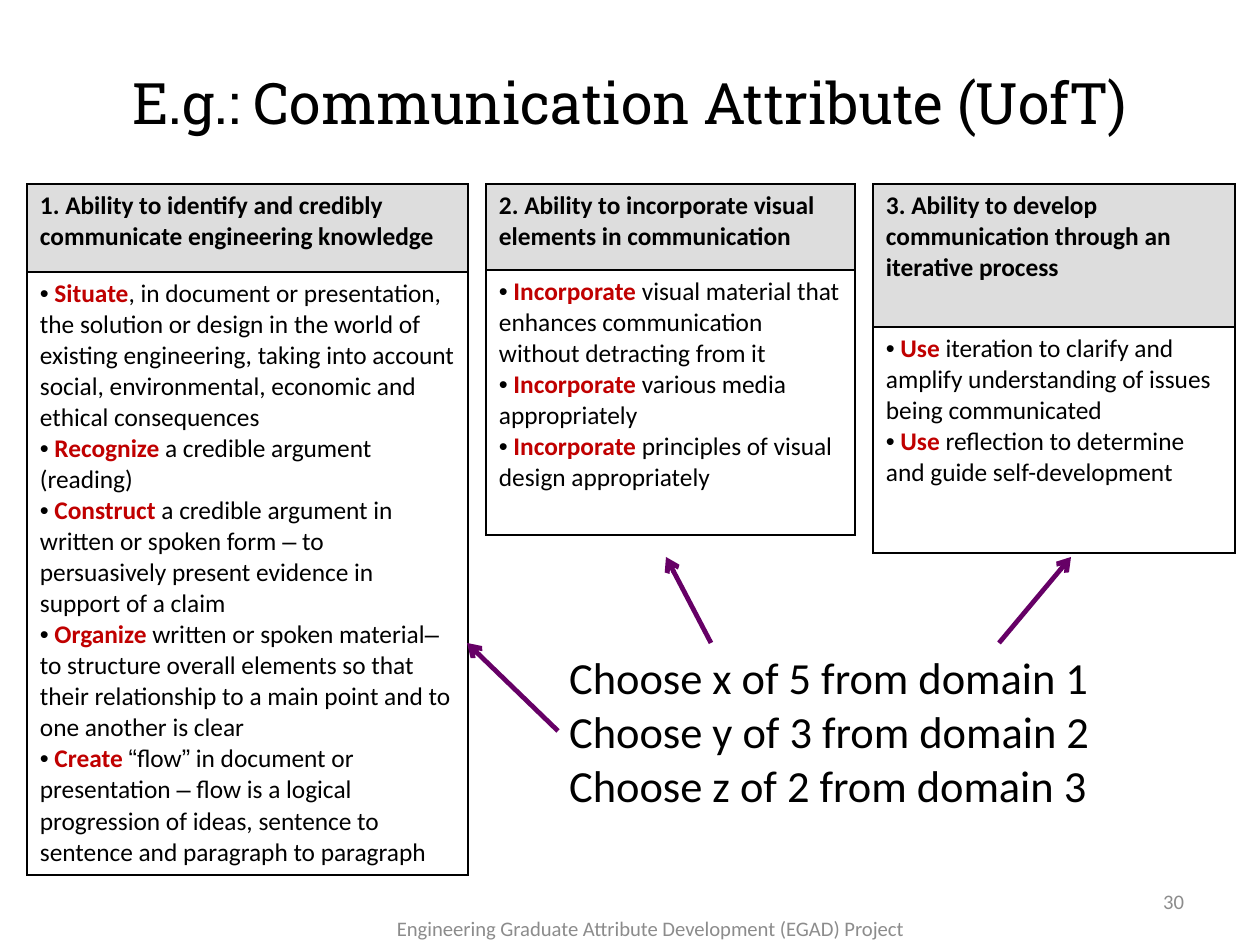
from itertools import groupby

from lxml.etree import SubElement
from pptx import Presentation
from pptx.dml.color import RGBColor
from pptx.enum.shapes import MSO_CONNECTOR
from pptx.enum.text import MSO_ANCHOR, PP_ALIGN
from pptx.oxml import parse_xml
from pptx.oxml.ns import nsdecls, qn
from pptx.util import Emu, Pt

PX = 8000  # EMU; the 28 by 21 cm slide is 1260 by 945 px

BLACK = RGBColor(0x00, 0x00, 0x00)
WHITE = RGBColor(0xFF, 0xFF, 0xFF)
HEADER_GRAY = RGBColor(0xDD, 0xDD, 0xDD)
FOOTER_GRAY = RGBColor(0x8C, 0x8C, 0x8C)
VERB_RED = RGBColor(0xC0, 0x00, 0x00)
ARROW_PURPLE = RGBColor(0x66, 0x00, 0x66)

INSETS = {"margin_left": 13, "margin_top": 6, "margin_right": 13, "margin_bottom": 6}
ARIAL_MARKS = "–“”"

# box of the table, header height, header, (verb, rest) of each indicator
DOMAINS = [
    ((27, 184, 441, 691), 88,
     "1. Ability to identify and credibly communicate engineering knowledge",
     [("Situate", ", in document or presentation, the solution or design in the world of "
       "existing engineering, taking into account social, environmental, economic and "
       "ethical consequences"),
      ("Recognize ", "a credible argument (reading)"),
      ("Construct ", "a credible argument in written or spoken form – to persuasively "
       "present evidence in support of a claim"),
      ("Organize ", "written or spoken material– to structure overall elements so that "
       "their relationship to a main point and to one another is clear"),
      ("Create ", "“flow” in document or presentation – flow is a logical progression "
       "of ideas, sentence to sentence and paragraph to paragraph")]),
    ((486, 184, 369, 351), 86,
     "2. Ability to incorporate visual elements in communication",
     [("Incorporate ", "visual material that enhances communication without detracting from it"),
      ("Incorporate ", "various media appropriately"),
      ("Incorporate ", "principles of visual design appropriately")]),
    ((873, 184, 362, 369), 143,
     "3. Ability to develop communication through an iterative process",
     [("Use ", "iteration to clarify and amplify understanding of issues being communicated"),
      ("Use ", "reflection to determine and guide self-development")]),
]
CHOICES = ["Choose x of 5 from domain 1", "Choose y of 3 from domain 2",
           "Choose z of 2 from domain 3"]


def px(*lengths):
    return [Emu(n * PX) for n in lengths]


def set_insets(target):
    for name, n in INSETS.items():
        setattr(target, name, Emu(n * PX))


def add_run(p, text, size, color=BLACK, bold=False, name="Calibri"):
    r = p.add_run()
    r.text = text
    for key, value in {"size": Pt(size), "bold": bold, "name": name}.items():
        setattr(r.font, key, value)
    r.font.color.rgb = color


def add_bullet(p):
    """Give a bullet whose wrapped lines return to the left edge."""
    pPr = p._p.get_or_add_pPr()
    pPr.set("marL", "0")
    pPr.set("indent", "0")
    SubElement(pPr, qn("a:buFont"), typeface="Arial")
    SubElement(pPr, qn("a:buChar"), char="•")


def format_cell(cell, color):
    set_insets(cell)
    cell.fill.solid()
    cell.fill.fore_color.rgb = color
    tcPr = cell._tc.get_or_add_tcPr()
    for i, side in enumerate("LRTB"):
        tcPr.insert(i, parse_xml(
            f'<a:ln{side} {nsdecls("a")} w="12700"><a:solidFill>'
            f'<a:srgbClr val="{BLACK}"/></a:solidFill></a:ln{side}>'))


def add_domain(slide, box, header_height, header, indicators):
    table = slide.shapes.add_table(2, 1, *px(*box)).table
    for flag in ("first_row", "horz_banding"):
        setattr(table, flag, False)
    heights = px(header_height, box[3] - header_height)
    for row, height, color in zip(table.rows, heights, (HEADER_GRAY, WHITE)):
        row.height = height
        format_cell(row.cells[0], color)
    add_run(table.cell(0, 0).text_frame.paragraphs[0], header, 16, bold=True)
    tf = table.cell(1, 0).text_frame
    for i, (verb, rest) in enumerate(indicators):
        p = tf.add_paragraph() if i else tf.paragraphs[0]
        add_bullet(p)
        add_run(p, " ", 16, bold=True)
        add_run(p, verb, 16, VERB_RED, bold=True)
        for is_mark, chars in groupby(rest, lambda c: c in ARIAL_MARKS):
            add_run(p, "".join(chars), 16, name="Arial" if is_mark else "Calibri")


def add_title(slide, box, text):
    title = slide.shapes.title
    for name, value in zip(("left", "top", "width", "height"), px(*box)):
        setattr(title, name, value)
    tf = title.text_frame
    set_insets(tf)
    tf.vertical_anchor = MSO_ANCHOR.MIDDLE
    p = tf.paragraphs[0]
    p.alignment = PP_ALIGN.CENTER
    add_run(p, text, 36, name="Roboto Slab")


def add_footer(slide, box, text, alignment):
    tf = slide.shapes.add_textbox(*px(*box)).text_frame
    set_insets(tf)
    tf.word_wrap = True
    tf.vertical_anchor = MSO_ANCHOR.MIDDLE
    p = tf.paragraphs[0]
    p.alignment = alignment
    add_run(p, text, 13, FOOTER_GRAY)


def add_choices(slide, box):
    sp = slide.shapes.add_textbox(*px(*box))
    tf = sp.text_frame
    tf.word_wrap = True
    for i, choice in enumerate(CHOICES):
        p = tf.add_paragraph() if i else tf.paragraphs[0]
        p.line_spacing = 1.02
        add_run(p, choice, 28)
    return sp


def add_arrow(slide, *ends):
    arrow = slide.shapes.add_connector(MSO_CONNECTOR.STRAIGHT, *px(*ends))
    arrow.line.width = Pt(3)
    arrow.line.color.rgb = ARROW_PURPLE
    SubElement(arrow.line._get_or_add_ln(), qn("a:tailEnd"), type="arrow")
    SubElement(arrow._element.spPr, qn("a:effectLst"))
    return arrow


def main():
    prs = Presentation()
    prs.slide_width, prs.slide_height = px(1260, 945)
    slide = prs.slides.add_slide(prs.slide_layouts[5])
    add_title(slide, (63, 23, 1134, 158), "E.g.: Communication Attribute (UofT)")
    for domain in DOMAINS:
        add_domain(slide, *domain)
    add_footer(slide, (351, 911, 598, 34),
               "Engineering Graduate Attribute Development (EGAD) Project", PP_ALIGN.CENTER)
    add_footer(slide, (903, 876, 294, 50), "30", PP_ALIGN.RIGHT)
    choices = add_choices(slide, (558, 643, 575, 176))
    add_arrow(slide, 558, 731, 467, 643).begin_connect(choices, 1)
    add_arrow(slide, 711, 643, 666, 557)
    add_arrow(slide, 999, 643, 1071, 557)
    prs.save("out.pptx")


if __name__ == "__main__":
    main()
